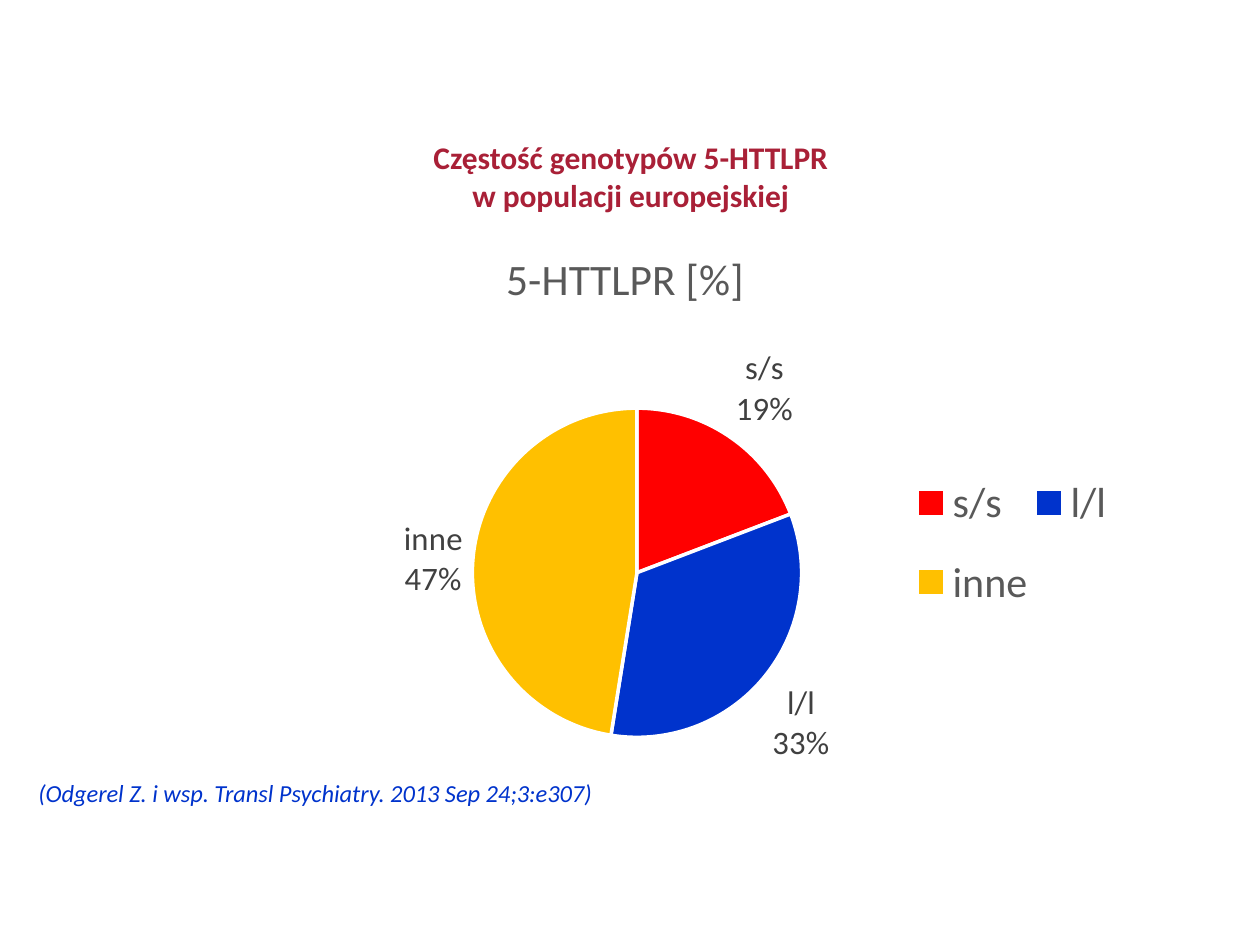
import pptx
import pptx.chart.data
import pptx.dml.color
import pptx.enum.chart
import pptx.enum.text
import pptx.oxml
import pptx.oxml.ns
import pptx.util

Inches = pptx.util.Inches
Pt = pptx.util.Pt
FONT = "Calibri"
COLORS = {
    "title": "A92037",
    "source": "0033CC",
    "muted": "595959",
    "label": "404040",
    "border": "FFFFFF",
    "chart": "000000",
    "s/s": "FF0000",
    "l/l": "0033CC",
    "inne": "FFC000",
}
GENOTYPES = {"s/s": 19, "l/l": 33, "inne": 47}


def rgb(name):
    return pptx.dml.color.RGBColor.from_string(COLORS[name])


def style_font(font, size, color):
    font.name = FONT
    font.size = Pt(size)
    font.color.rgb = rgb(color)


def add_text(page, box, text, size, color):
    frame = page.shapes.add_textbox(*map(Inches, box)).text_frame
    frame.word_wrap = True
    para = frame.paragraphs[0]
    para.text = text
    style_font(para.font, size, color)
    return frame


def add_title(page, box):
    text = "Częstość genotypów 5-HTTLPR\vw populacji europejskiej"
    frame = add_text(page, box, text, 13.5, "title")
    frame.vertical_anchor = pptx.enum.text.MSO_ANCHOR.MIDDLE
    para = frame.paragraphs[0]
    para.alignment = pptx.enum.text.PP_ALIGN.CENTER
    para.font.bold = True


def add_source(page, box):
    text = "(Odgerel Z. i wsp. Transl Psychiatry. 2013 Sep 24;3:e307)"
    frame = add_text(page, box, text, 10.5, "source")
    frame.paragraphs[0].font.italic = True


def set_layout(chart, part, index, **fractions):
    parent = chart.element.xpath(f".//c:{part}")[0]
    for old in parent.xpath("./c:layout"):
        parent.remove(old)
    target = '<c:layoutTarget val="inner"/>' if part == "plotArea" else ""
    sizes = "".join(f'<c:{key} val="{value}"/>' for key, value in fractions.items())
    parent.insert(index, pptx.oxml.parse_xml(
        f'<c:layout {pptx.oxml.ns.nsdecls("c")}><c:manualLayout>{target}'
        f'<c:xMode val="edge"/><c:yMode val="edge"/>{sizes}'
        "</c:manualLayout></c:layout>"
    ))


def add_pie(page, box):
    data = pptx.chart.data.CategoryChartData()
    data.categories = list(GENOTYPES)
    data.add_series("Series 1", list(GENOTYPES.values()))
    kind = pptx.enum.chart.XL_CHART_TYPE.PIE
    chart = page.shapes.add_chart(kind, *map(Inches, box), data).chart
    style_font(chart.font, 10, "chart")

    chart.has_title = True
    heading = chart.chart_title.text_frame.paragraphs[0]
    heading.text = "5-HTTLPR [%]"
    style_font(heading.font, 18.6, "muted")
    heading.font.bold = False

    chart.has_legend = True
    chart.legend.position = pptx.enum.chart.XL_LEGEND_POSITION.BOTTOM
    chart.legend.include_in_layout = False
    style_font(chart.legend.font, 18, "muted")

    plot = chart.plots[0]
    plot.vary_by_categories = True
    series = plot.series[0]
    for index, name in enumerate(GENOTYPES):
        look = series.points[index].format
        look.fill.solid()
        look.fill.fore_color.rgb = rgb(name)
        look.line.color.rgb = rgb("border")
        look.line.width = Pt(1.5)

    labels = series.data_labels
    labels.show_category_name = True
    labels.show_percentage = True
    labels.show_value = False
    labels.position = pptx.enum.chart.XL_LABEL_POSITION.OUTSIDE_END
    style_font(labels.font, 14, "label")

    set_layout(chart, "title", 1, x=0.38, y=0.03)
    set_layout(chart, "plotArea", 0, x=0.35, y=0.28, w=0.33, h=0.49)
    set_layout(chart, "legend", 1, x=0.78, y=0.34, w=0.2, h=0.28)


def main():
    deck = pptx.Presentation()
    deck.slide_width = Inches(7.5)
    deck.slide_height = deck.slide_width * 3 // 4
    page = deck.slides.add_slide(deck.slide_layouts[6])
    add_title(page, (0.38, 0.77, 6.75, 0.55))
    add_pie(page, (0.64, 1.31, 6.12, 4))
    add_source(page, (0.13, 4.58, 3.88, 0.28))
    deck.save("out.pptx")


if __name__ == "__main__":
    main()
